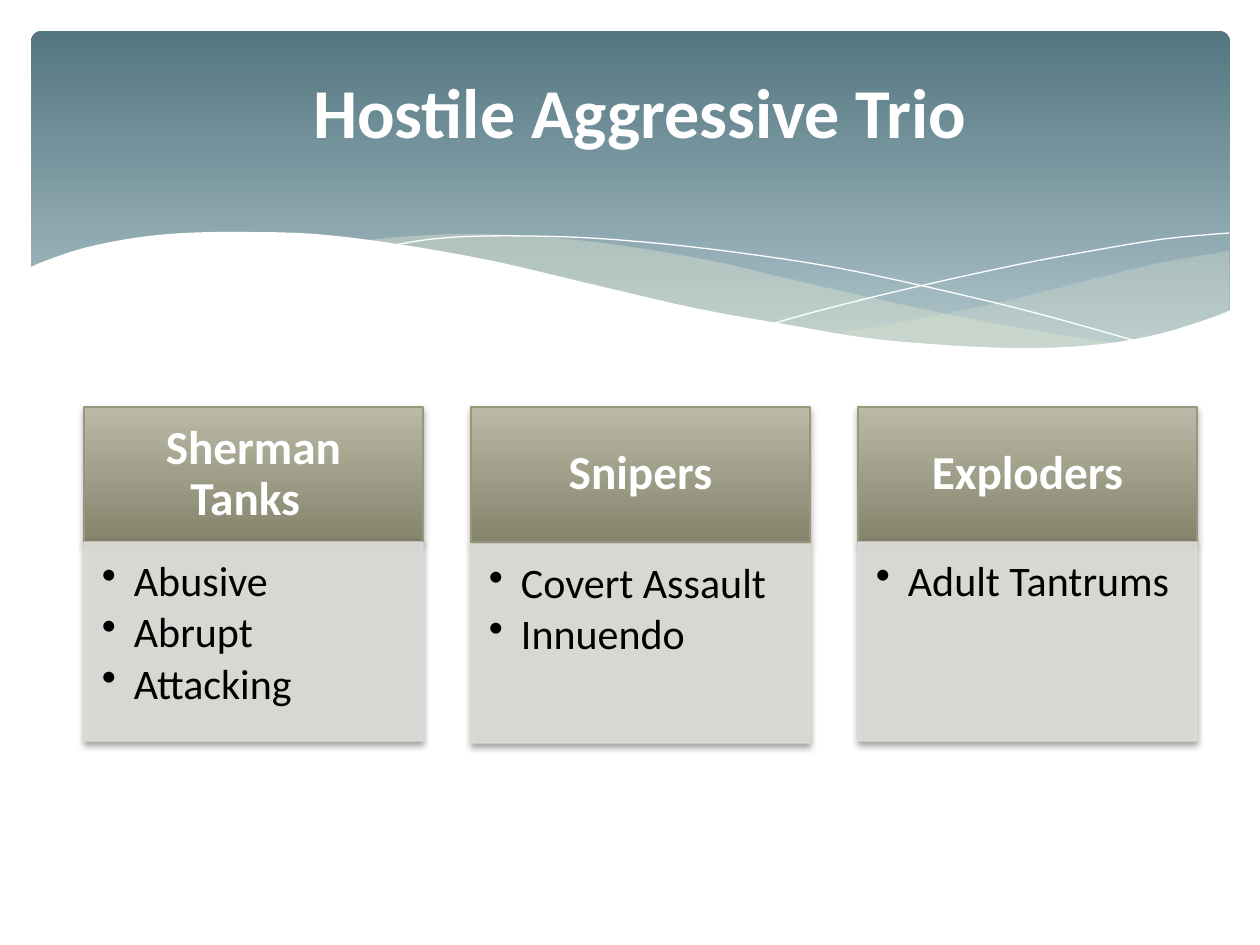
from dataclasses import dataclass
from itertools import chain
from lxml.etree import SubElement
from pptx import Presentation
from pptx.dml.color import RGBColor
from pptx.enum.shapes import MSO_SHAPE
from pptx.enum.text import MSO_ANCHOR, PP_ALIGN
from pptx.oxml.ns import qn
from pptx.util import Pt


@dataclass(frozen=True)
class Theme:
    font: str = "Calibri"
    white: str = "FFFFFF"
    ink: str = "000000"
    sky: tuple = (("537680", 0), ("ACC2C9", 0.9))
    mist: str = "DFE6D0"
    olive: tuple = (("BBBAA6", 0), ("84836C", 1))
    edge: str = "99987F"
    stone: str = "DEDDD8"
    title: int = 40
    head: int = 27
    item: int = 24


def px(n):
    return round(n * 914400 / 126)


def rgb(code):
    return RGBColor.from_string(code)


def curve(knots, steps=4):
    """Points of a smooth line that runs through all knots."""
    ends = [knots[0], *knots, knots[-1]]
    points = []
    for a, b, c, d in zip(ends, ends[1:], ends[2:], ends[3:]):
        for step in range(steps):
            t = step / steps
            points.append(tuple(
                (2 * q + (r - p) * t + (2 * p - 5 * q + 4 * r - s) * t ** 2
                 + (3 * q - p - 3 * r + s) * t ** 3) / 2
                for p, q, r, s in zip(a, b, c, d)))
    return points + [knots[-1]]


def write(shape, text, size, color, bold=False, align=PP_ALIGN.CENTER,
          anchor=MSO_ANCHOR.MIDDLE, inset=(0, 0, 0, 0), lead=1.0, after=0,
          bullet=None):
    """Set the text of a shape, one paragraph a line."""
    frame = shape.text_frame
    frame.word_wrap = True
    frame.vertical_anchor = anchor
    (frame.margin_left, frame.margin_top,
     frame.margin_right, frame.margin_bottom) = map(px, inset)
    for i, line in enumerate(text.split("\n")):
        para = frame.add_paragraph() if i else frame.paragraphs[0]
        para.alignment = align
        para.line_spacing = lead
        para.space_after = Pt(after)
        run = para.add_run()
        run.text = line
        run.font.name = THEME.font
        run.font.size = Pt(size)
        run.font.bold = bold
        run.font.color.rgb = rgb(color)
        if bullet:
            props = para._p.get_or_add_pPr()
            props.set("marL", str(px(32)))
            props.set("indent", str(-px(32)))
            SubElement(props, qn("a:buChar"), char=bullet)


class Deck:
    def __init__(self, theme):
        self.theme = theme
        self.prs = Presentation()
        self.prs.slide_width, self.prs.slide_height = px(1260), px(945)
        self.slide = self.prs.slides.add_slide(self.prs.slide_layouts[6])
        self.shapes = self.slide.shapes

    def paint(self, shape, fill=None, line=None, width=0.75, alpha=100):
        shape.shadow.inherit = False
        if fill is None:
            shape.fill.background()
        elif isinstance(fill, str):
            shape.fill.solid()
            shape.fill.fore_color.rgb = rgb(fill)
        else:
            shape.fill.gradient()
            shape.fill.gradient_angle = 270
            for stop, (color, place) in zip(shape.fill.gradient_stops, fill):
                stop.color.rgb = rgb(color)
                stop.position = place
        if line:
            shape.line.color.rgb = rgb(line)
            shape.line.width = Pt(width)
        else:
            shape.line.fill.background()
        if alpha < 100:
            for tint in shape.element.spPr.iter(qn("a:srgbClr")):
                SubElement(tint, qn("a:alpha"), val=str(alpha * 1000))
        return shape

    def box(self, x, y, w, h, kind=MSO_SHAPE.RECTANGLE, **look):
        shape = self.shapes.add_shape(kind, px(x), px(y), px(w), px(h))
        return self.paint(shape, **look)

    def wave(self, points, close=True, **look):
        spots = [(px(x), px(y)) for x, y in points]
        path = self.shapes.build_freeform(*spots[0], scale=1.0)
        path.add_line_segments(spots[1:], close=close)
        return self.paint(path.convert_to_shape(), **look)

    def shade(self, shape):
        effects = shape.element.spPr.find(qn("a:effectLst"))
        outer = SubElement(effects, qn("a:outerShdw"), blurRad=str(Pt(4)),
                           dist=str(Pt(2)), dir="5400000", rotWithShape="0")
        tint = SubElement(outer, qn("a:srgbClr"), val=self.theme.ink)
        SubElement(tint, qn("a:alpha"), val="38000")

    def label(self, x, y, w, h, text, **style):
        shape = self.shapes.add_textbox(px(x), px(y), px(w), px(h))
        write(shape, text, **style)

    def card(self, x, y, w, drop, head, items):
        look = self.theme
        top = self.box(x, y, w, 135, fill=look.olive, line=look.edge)
        self.shade(top)
        write(top, head, look.head, look.white, bold=True,
              inset=(26, 15, 26, 15), lead=0.9)
        body = self.box(x, y + 135 + drop, w, 199, fill=look.stone,
                        line=look.stone, alpha=90)
        self.shade(body)
        write(body, "\n".join(items), look.item, look.ink,
              align=PP_ALIGN.LEFT, anchor=MSO_ANCHOR.TOP,
              inset=(18, 18, 24, 26), lead=0.9, after=3.5, bullet="•")


THEME = Theme()

# Each ribbon is an upper and a lower curve, with its opacity
RIBBONS = [
    (29, [(1229, 251), (1160, 263), (1085, 281), (1014, 299), (919, 319),
          (833, 334)],
     [(833, 334), (905, 341), (969, 348), (1026, 350), (1087, 348),
      (1141, 339), (1187, 327), (1229, 311)]),
    (40, [(360, 241), (413, 236), (479, 234), (557, 238), (631, 247),
          (717, 262), (793, 280), (890, 302), (977, 320), (1055, 334),
          (1125, 344)],
     [(1125, 344), (1068, 349), (1003, 350), (943, 348), (876, 340),
      (799, 329), (713, 312), (619, 292), (538, 272), (456, 256),
      (360, 241)]),
]
THREADS = [
    [(389, 246), (433, 239), (488, 236), (567, 237), (643, 242), (733, 252),
     (838, 268), (958, 294), (1047, 316), (1143, 343)],
    [(772, 324), (822, 310), (907, 289), (1016, 265), (1091, 251),
     (1164, 239), (1229, 233)],
]
CREST = [(29, 268), (45, 261), (84, 248), (134, 238), (184, 233), (243, 232),
         (315, 234), (397, 244), (493, 261), (599, 286), (699, 309),
         (789, 325), (867, 338), (959, 346), (1037, 348), (1103, 344),
         (1159, 334), (1208, 319), (1231, 310)]
# Heading, offset of the lower box, items
CARDS = [
    ("Sherman Tanks\t", 0, ["Abusive", "Abrupt", "Attacking"]),
    ("Snipers", 2, ["Covert Assault", "Innuendo"]),
    ("Exploders", 0, ["Adult Tantrums"]),
]


def main():
    deck = Deck(THEME)

    # Banner with waves
    banner = deck.box(31, 31, 1199, 340, MSO_SHAPE.ROUNDED_RECTANGLE,
                      fill=THEME.sky)
    banner.adjustments[0] = 0.03
    for alpha, upper, lower in RIBBONS:
        deck.wave(chain(curve(upper), curve(lower)), fill=THEME.mist,
                  alpha=alpha)
    for thread in THREADS:
        deck.wave(curve(thread), close=False, line=THEME.white, width=0)
    deck.wave(curve(CREST) + [(1231, 415), (29, 415)], fill=THEME.white)

    # Title
    deck.label(73, 32, 1134, 158, "Hostile Aggressive Trio",
               size=THEME.title, color=THEME.white, bold=True)

    # Three cards
    for i, (head, drop, items) in enumerate(CARDS):
        deck.card(84 + 387 * i, 407, 339, drop, head, items)

    deck.prs.save("out.pptx")


if __name__ == "__main__":
    main()
